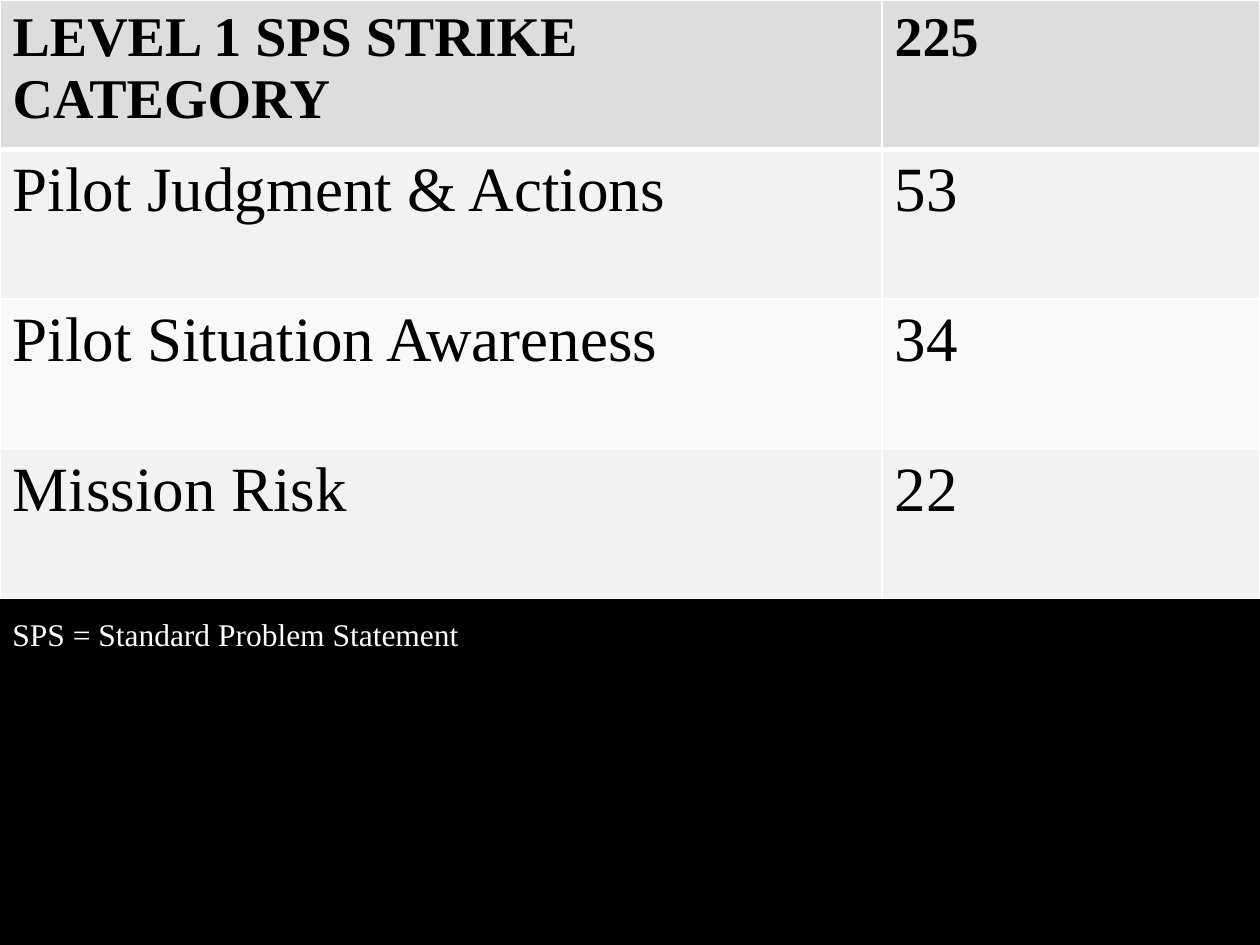
from lxml.etree import SubElement
from pptx import Presentation
from pptx.dml.color import RGBColor
from pptx.enum.text import MSO_AUTO_SIZE
from pptx.oxml.ns import qn
from pptx.util import Pt

FONT = "Times New Roman"


def add_text(frame, text, size, color, bold=False):
    run = frame.paragraphs[0].add_run()
    run.text = text
    run.font.name = FONT
    run.font.size = Pt(size)
    run.font.bold = bold
    run.font.color.rgb = RGBColor.from_string(color)


def set_borders(cell, bottom_width, color="FFFFFF"):
    properties = cell._tc.get_or_add_tcPr()
    widths = {"a:lnL": 1, "a:lnR": 1, "a:lnT": 1, "a:lnB": bottom_width}
    for position, (tag, width) in enumerate(widths.items()):
        line = SubElement(properties, qn(tag), w=str(Pt(width)))
        fill = SubElement(line, qn("a:solidFill"))
        SubElement(fill, qn("a:srgbClr"), val=color)
        # Borders must come before the cell fill
        properties.insert(position, line)


presentation = Presentation()
presentation.slide_width = Pt(720)
presentation.slide_height = Pt(540)
slide = presentation.slides.add_slide(presentation.slide_layouts[6])
slide.background.fill.solid()
slide.background.fill.fore_color.rgb = RGBColor.from_string("000000")

# Strike categories with their counts
categories = [
    ("LEVEL 1 SPS STRIKE CATEGORY", "225"),
    ("Pilot Judgment & Actions", "53"),
    ("Pilot Situation Awareness", "34"),
    ("Mission Risk", "22"),
]
row_fills = ["DDDDDD", "F2F2F2", "F9F9F9", "F2F2F2"]
strikes = slide.shapes.add_table(
    len(categories), 2, Pt(0), Pt(0), Pt(720), Pt(342)
).table
strikes.columns[0].width = Pt(504)
strikes.columns[1].width = Pt(216)

for row, (category, row_fill) in enumerate(zip(categories, row_fills)):
    is_header = row == 0
    for column, text in enumerate(category):
        cell = strikes.cell(row, column)
        cell.fill.solid()
        cell.fill.fore_color.rgb = RGBColor.from_string(row_fill)
        set_borders(cell, bottom_width=3 if is_header else 1)
        # The header's thick rule is also the top edge of the next row
        if row == 1:
            cell._tc.tcPr.find(qn("a:lnT")).set("w", str(Pt(3)))
        add_text(cell.text_frame, text, 32 if is_header else 36, "000000", is_header)

# Abbreviation note
note = slide.shapes.add_textbox(Pt(0), Pt(348), Pt(720), Pt(29)).text_frame
note.word_wrap = True
note.auto_size = MSO_AUTO_SIZE.SHAPE_TO_FIT_TEXT
add_text(note, "SPS = Standard Problem Statement", 18, "FFFFFF")

presentation.save("out.pptx")
